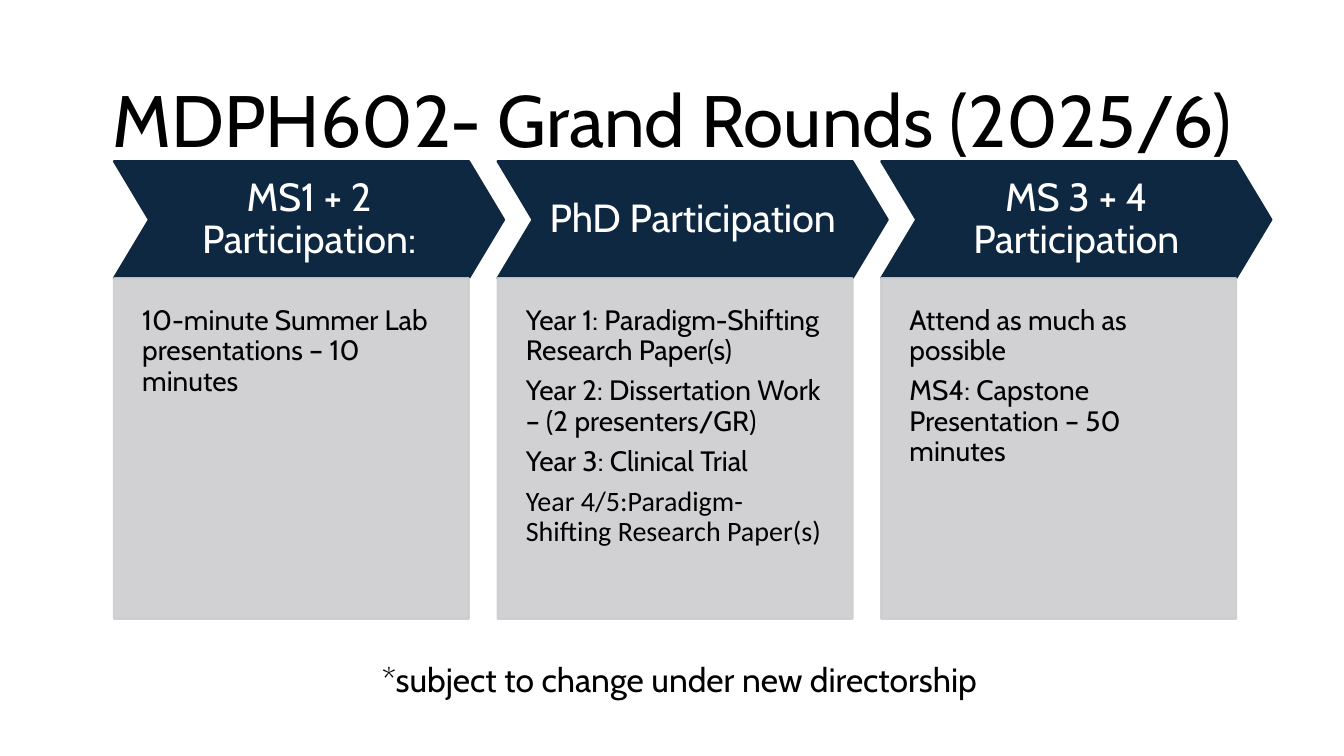
from pptx import Presentation
from pptx.dml.color import RGBColor
from pptx.enum.shapes import MSO_SHAPE as SHAPE
from pptx.enum.text import MSO_ANCHOR as ANCHOR, PP_ALIGN as ALIGN
from pptx.oxml.ns import qn
from pptx.util import Inches, Pt
from lxml.etree import SubElement

TITLE = "MDPH602- Grand Rounds (2025/6)"
FOOTNOTE = "*subject to change under new directorship"
GROUPS = [
    ("MS1 + 2 Participation:", [
        ("10-minute Summer Lab presentations – 10 minutes", "Cabin"),
    ]),
    ("PhD Participation", [
        ("Year 1: Paradigm-Shifting Research Paper(s)", "Cabin"),
        ("Year 2: Dissertation Work – (2 presenters/GR)", "Cabin"),
        ("Year 3: Clinical Trial", "Cabin"),
        ("Year 4/5:Paradigm-Shifting Research Paper(s)", "Calibri"),
    ]),
    ("MS 3 + 4 Participation", [
        ("Attend as much as possible", "Cabin"),
        ("MS4: Capstone Presentation – 50 minutes", "Cabin"),
    ]),
]
COLORS = {"navy": "0E2841", "grey": "CCCDCF", "black": "000000", "white": "FFFFFF"}

SLIDE_W, SLIDE_H = 13.33, 7.5
LEFT, TOP, PITCH = 1.13, 1.6, 3.805
HEAD_W, HEAD_H = 3.87, 1.16
BODY_W, BODY_H = 3.52, 3.38
NOTCH = 0.3
SPACE_AFTER = 0.35  # share of the text size


def write(s, paragraphs, size, color="black", align=ALIGN.LEFT, anchor=ANCHOR.TOP,
          insets=(0.1, 0.05, 0.1, 0.05), line=0.9, after=0):
    """Fill a shape with (text, font name) paragraphs."""
    tf = s.text_frame
    tf.word_wrap = True
    tf.vertical_anchor = anchor
    (tf.margin_left, tf.margin_top,
     tf.margin_right, tf.margin_bottom) = map(Inches, insets)
    for i, (text, font) in enumerate(paragraphs):
        p = tf.add_paragraph() if i else tf.paragraphs[0]
        p.alignment, p.line_spacing = align, line
        p.space_after = Pt(size * after)
        r = p.add_run()
        r.text = text
        r.font.name, r.font.size = font, Pt(size)
        r.font.color.rgb = RGBColor.from_string(COLORS[color])


def add_panel(slide, kind, box, color, opacity=100):
    s = slide.shapes.add_shape(kind, *map(Inches, box))
    s.shadow.inherit = False
    s.fill.solid()
    s.line.width = Pt(1.5)
    for fill in (s.fill, s.line.fill):
        fill.solid()
        fill.fore_color.rgb = RGBColor.from_string(COLORS[color])
    if opacity < 100:
        for clr in s._element.spPr.iter(qn("a:srgbClr")):
            SubElement(clr, qn("a:alpha")).set("val", str(opacity * 1000))
    return s


def add_text(slide, box, text, size, **fmt):
    s = slide.shapes.add_textbox(*map(Inches, box))
    write(s, [(text, "Cabin")], size, **fmt)


def main():
    prs = Presentation()
    prs.slide_width, prs.slide_height = Inches(SLIDE_W), Inches(SLIDE_H)
    slide = prs.slides.add_slide(prs.slide_layouts[6])

    add_text(slide, (0.92, 0.61, 11.5, 1.24), TITLE, 52,
             align=ALIGN.CENTER, anchor=ANCHOR.MIDDLE)
    for col, (heading, items) in enumerate(GROUPS):
        x = LEFT + col * PITCH
        head = add_panel(slide, SHAPE.CHEVRON, (x, TOP, HEAD_W, HEAD_H), "navy")
        head.adjustments[0] = NOTCH
        write(head, [(heading, "Cabin")], 28, color="white", align=ALIGN.CENTER,
              anchor=ANCHOR.MIDDLE, insets=(0.14,) * 4, after=SPACE_AFTER)
        body = add_panel(slide, SHAPE.RECTANGLE, (x, TOP + HEAD_H, BODY_W, BODY_H),
                         "grey", opacity=90)
        write(body, items, 20, insets=(0.28, 0.28, 0.28, 0.56), after=SPACE_AFTER)
    add_text(slide, (3.69, 6.49, 6.67, 0.81), FOOTNOTE, 24, line=1.0)

    prs.save("out.pptx")


if __name__ == "__main__":
    main()
